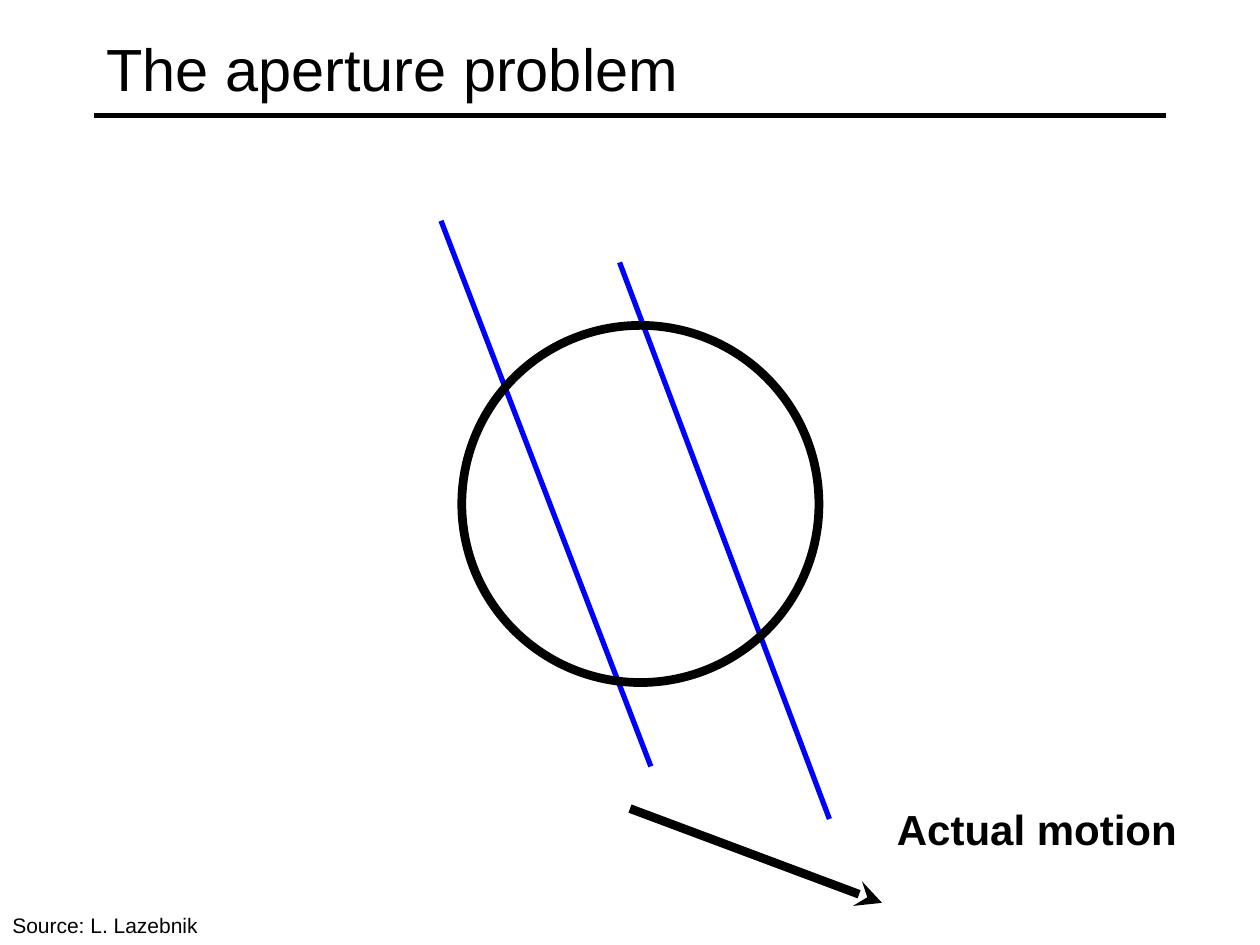
from lxml.etree import SubElement
from pptx import Presentation
from pptx.dml.color import RGBColor
from pptx.enum.shapes import MSO_CONNECTOR as Connector, MSO_SHAPE as Shape
from pptx.enum.text import MSO_ANCHOR as Anchor
from pptx.oxml.ns import qn
from pptx.util import Cm, Pt

BLACK = RGBColor(0x00, 0x00, 0x00)
WHITE = RGBColor(0xFF, 0xFF, 0xFF)
BLUE = RGBColor(0x00, 0x00, 0xFF)


class SlideBuilder:
    """Holds the style and the current slide; lengths are in centimetres."""

    font_name = "Arial"

    def __init__(self, slide):
        self.slide = slide

    def line(self, start, end, color, width, arrow=False):
        points = [Cm(value) for value in (*start, *end)]
        connector = self.slide.shapes.add_connector(Connector.STRAIGHT, *points)
        connector.line.color.rgb = color
        connector.line.width = Pt(width)
        if arrow:
            SubElement(connector.line._get_or_add_ln(), qn("a:tailEnd"), type="stealth")
        SubElement(connector._element.spPr, qn("a:effectLst"))

    def circle(self, left, top, diameter, color, width):
        shape = self.slide.shapes.add_shape(
            Shape.OVAL, Cm(left), Cm(top), Cm(diameter), Cm(diameter))
        shape.shadow.inherit = False
        shape.fill.background()
        shape.line.color.rgb = color
        shape.line.width = Pt(width)

    def text(self, box, text, size, bold=False, wrap=True, anchor=Anchor.TOP, fill=None):
        shape = self.slide.shapes.add_textbox(*(Cm(value) for value in box))
        if fill is not None:
            shape.fill.solid()
            shape.fill.fore_color.rgb = fill
        frame = shape.text_frame
        frame.word_wrap = wrap
        frame.vertical_anchor = anchor
        paragraph = frame.paragraphs[0]
        paragraph.text = text
        paragraph.font.name = self.font_name
        paragraph.font.size = Pt(size)
        paragraph.font.bold = bold
        paragraph.font.color.rgb = BLACK


def main():
    presentation = Presentation()
    presentation.slide_width = Cm(25.4)
    presentation.slide_height = Cm(19.05)
    builder = SlideBuilder(presentation.slides.add_slide(presentation.slide_layouts[6]))

    # Title and rule
    builder.line((1.9, 2.33), (23.5, 2.33), BLACK, 3)
    builder.text((1.9, 0.2, 21.6, 2.33), "The aperture problem", 34, anchor=Anchor.MIDDLE)

    # Moving edges seen through the aperture
    builder.line((8.89, 4.45), (13.12, 15.45), BLUE, 3)
    builder.line((12.49, 5.29), (16.72, 16.51), BLUE, 3)
    builder.circle(9.31, 6.56, 7.2, BLACK, 5)

    # Direction of motion
    builder.line((12.7, 16.3), (17.78, 18.2), BLACK, 5, arrow=True)
    builder.text((17.83, 16.08, 6.15, 1.27), "Actual motion", 24, bold=True, wrap=False)

    # Source
    builder.text((0, 18.28, 4.9, 0.77), "Source: L. Lazebnik", 12, fill=WHITE)

    presentation.save("out.pptx")


if __name__ == "__main__":
    main()
